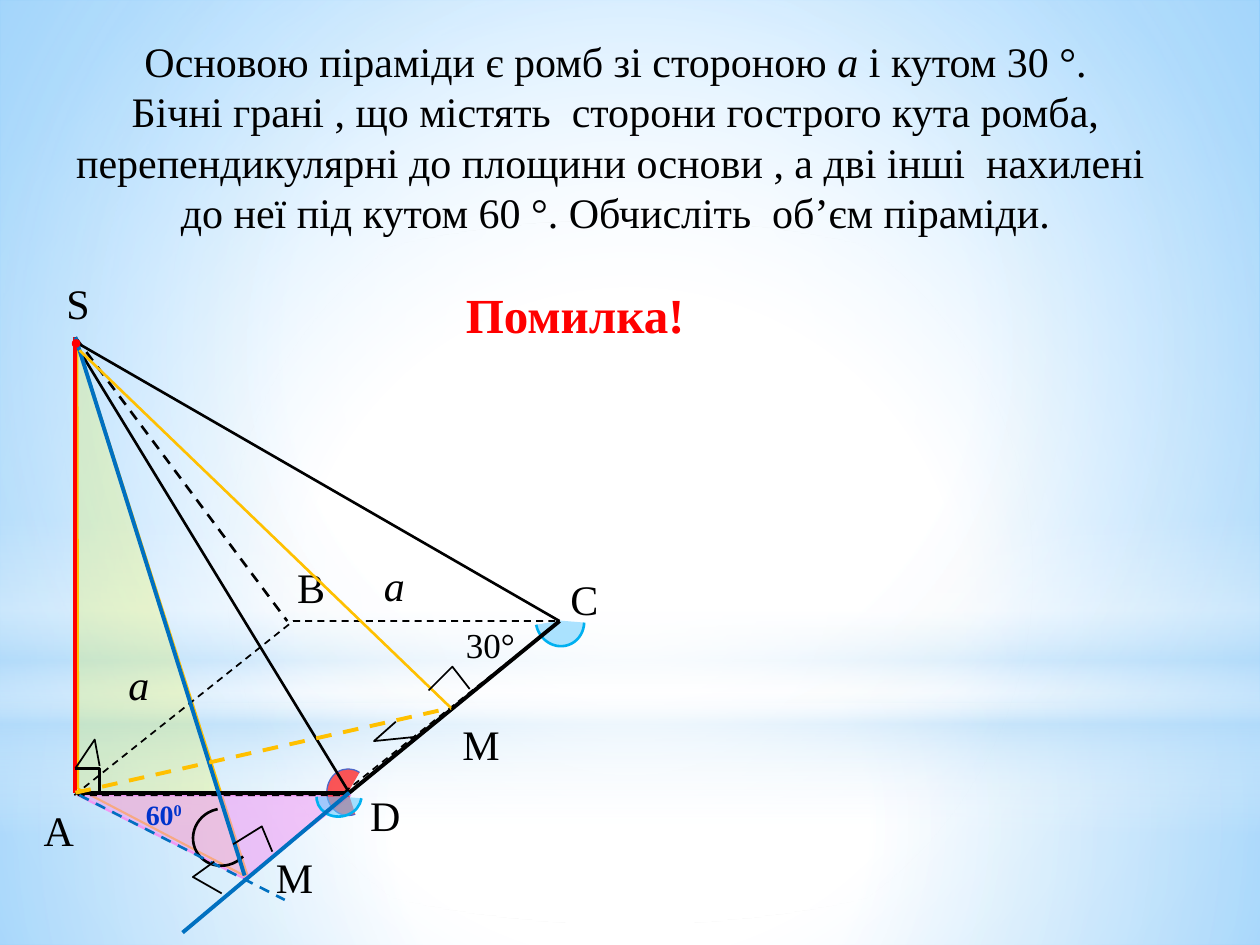
from lxml import etree
from pptx import Presentation
from pptx.dml.color import RGBColor
from pptx.enum.dml import MSO_LINE
from pptx.enum.shapes import MSO_CONNECTOR, MSO_SHAPE
from pptx.enum.text import MSO_ANCHOR, MSO_AUTO_SIZE, PP_ALIGN
from pptx.oxml.ns import qn
from pptx.util import Cm, Pt

RECTANGLE, OVAL = MSO_SHAPE.RECTANGLE, MSO_SHAPE.OVAL
TRIANGLE, ARC = MSO_SHAPE.ISOSCELES_TRIANGLE, MSO_SHAPE.ARC
PARALLELOGRAM = MSO_SHAPE.PARALLELOGRAM
STRAIGHT, DASH = MSO_CONNECTOR.STRAIGHT, MSO_LINE.DASH
CENTER, MIDDLE, NO_RESIZE = PP_ALIGN.CENTER, MSO_ANCHOR.MIDDLE, MSO_AUTO_SIZE.NONE

FONT = "Times New Roman"
COLORS = {
    "black": "000000", "white": "FFFFFF", "red": "FF0000", "blue": "0070C0",
    "orange": "FFC000", "yellow": "FFFF00", "pink": "F197F3", "indigo": "4E67C8",
    "cyan": "00B0F0", "light cyan": "66CCFF", "angle blue": "0033CC",
    "sky": "63BCFF", "pale sky": "B4DCFA",
}
ADJUST_PER_DEGREE = 0.6


def color(name):
    return RGBColor.from_string(COLORS[name])


def set_gradient(owner, stops, center=None):
    """Swap the solid fill under owner for a gradient: radial with a center, else vertical."""
    solid = next(owner.iter(qn("a:solidFill")))
    gradient = etree.Element(qn("a:gradFill"), rotWithShape="1")
    stop_list = etree.SubElement(gradient, qn("a:gsLst"))
    for position, name, opacity in stops:
        stop = etree.SubElement(stop_list, qn("a:gs"), pos=str(position * 1000))
        tint = etree.SubElement(stop, qn("a:srgbClr"), val=COLORS[name])
        if opacity < 100:
            etree.SubElement(tint, qn("a:alpha"), val=str(opacity * 1000))
    if center:
        circle = etree.SubElement(gradient, qn("a:path"), {"path": "circle"})
        sides = {side: str(value * 1000) for side, value in zip("ltrb", center)}
        etree.SubElement(circle, qn("a:fillToRect"), sides)
    else:
        etree.SubElement(gradient, qn("a:lin"), ang="5400000", scaled="0")
    solid.getparent().replace(solid, gradient)


def set_line(line, name, width, dash=None):
    line.color.rgb = color(name)
    line.width = Pt(width)
    if dash:
        line.dash_style = dash


def add_preset(slide, kind, box, fill=None, opacity=100, line=None, rotation=0, adjust=()):
    shape = slide.shapes.add_shape(kind, *map(Cm, box))
    shape.shadow.inherit = False
    shape.rotation = rotation
    for index, value in enumerate(adjust):
        shape.adjustments[index] = value
    if fill:
        shape.fill.solid()
        shape.fill.fore_color.rgb = color(fill)
        if opacity < 100:
            tint = next(shape.element.spPr.iter(qn("a:srgbClr")))
            etree.SubElement(tint, qn("a:alpha"), val=str(opacity * 1000))
    else:
        shape.fill.background()
    if line:
        set_line(shape.line, *line)
    else:
        shape.line.fill.background()
    return shape


def add_run(paragraph, text, size=24, name="black", **extra):
    run = paragraph.add_run()
    run.text = text
    values = {"name": FONT, "size": Pt(size), "bold": False, "italic": False, **extra}
    for attribute, value in values.items():
        setattr(run.font, attribute, value)
    run.font.color.rgb = color(name)
    return run


def add_label(slide, box, text, wrap=False, **style):
    frame = slide.shapes.add_textbox(*map(Cm, box)).text_frame
    frame.word_wrap = wrap
    add_run(frame.paragraphs[0], text, **style)
    return frame.paragraphs[0]


def add_backdrop(slide, width, height):
    slide.background.fill.solid()
    set_gradient(slide.element, [(0, "white", 100), (42, "white", 100), (100, "sky", 100)],
                 (24, 44, 24, 12))
    middle = (50, 50, 50, 50)
    horizon = 14.17
    layers = [
        (RECTANGLE, horizon, height - horizon,
         [(0, "white", 91), (37, "white", 76), (100, "pale sky", 79)], middle),
        (RECTANGLE, 0, horizon,
         [(0, "white", 89), (48, "white", 62), (100, "pale sky", 79)], middle),
        (RECTANGLE, 10.46, 6.35,
         [(0, "white", 0), (29, "white", 30), (45, "pale sky", 40),
          (55, "white", 26), (65, "pale sky", 60), (100, "white", 0)], None),
        (OVAL, 4.45, 14.17, [(0, "white", 100), (56, "white", 0)], middle),
    ]
    for kind, top, depth, stops, center in layers:
        layer = add_preset(slide, kind, (0, top, width, depth), fill="white")
        set_gradient(layer.element.spPr, stops, center)


def add_problem(slide, box):
    title = slide.shapes.title
    title.element.getparent().append(title.element)  # in front of the backdrop
    title.left, title.top, title.width, title.height = map(Cm, box)
    frame = title.text_frame
    for attribute, value in {"word_wrap": True, "auto_size": NO_RESIZE,
                             "vertical_anchor": MIDDLE}.items():
        setattr(frame, attribute, value)
    first, second = frame.paragraphs[0], frame.add_paragraph()
    first.alignment = second.alignment = CENTER
    add_run(first, "Основою піраміди є ромб зі стороною ")
    add_run(first, "а", italic=True)
    add_run(first, " і кутом 30 °.")
    add_run(second, "Бічні грані , що містять  сторони гострого кута ромба, "
                    "перепендикулярні до площини основи , а дві інші  нахилені  "
                    "до неї під кутом 60 °. Обчисліть  об’єм піраміди.")


def add_pyramid(slide, left, top):
    """Draw the pyramid with its apex S at (left, top)."""
    def place(x, y, *size):
        return (left + x, top + y, *size)

    def add_arc(box, start, end, rotation, **style):
        add_preset(slide, ARC, place(*box), rotation=rotation,
                   adjust=(start * ADJUST_PER_DEGREE, end * ADJUST_PER_DEGREE), **style)

    def add_edge(start, end, name="black", width=1.5, dash=None):
        edge = slide.shapes.add_connector(STRAIGHT, *map(Cm, place(*start) + place(*end)))
        etree.SubElement(edge.element.spPr, qn("a:effectLst"))
        set_line(edge.line, name, width, dash)

    def add_right_angle(points, width=1):
        start, *rest = [tuple(map(Cm, place(*point))) for point in points]
        builder = slide.shapes.build_freeform(*start)
        builder.add_line_segments(rest, close=False)
        mark = builder.convert_to_shape()
        mark.shadow.inherit = False
        mark.fill.background()
        set_line(mark.line, "black", width)

    apex, a, b, c, d = (0.02, 0), (0.02, 9.18), (4.29, 5.72), (9.78, 5.72), (5.54, 9.18)
    middle, foot = (7.59, 7.47), (3.43, 10.85)

    add_preset(slide, TRIANGLE, place(-5.18, 4.55, 11.33, 2.72), "yellow", 19,
               ("orange", 1.25), 252.3, [0.243])
    add_preset(slide, TRIANGLE, place(0.07, 9.23, 5.49, 1.68), "pink", 54,
               ("pink", 1.25), 180, [0.389])
    add_arc((5.05, 8.74, 0.94, 0.86), 162, 29.89, 270,
            fill="red", opacity=66, line=("indigo", 0.75))

    for text, x, y, width, italic in [
        ("S", -0.41, -1.34, 0.99, False), ("А", -0.87, 9.3, 1.14, False),
        ("В", 4.24, 4.4, 1.09, False), ("С", 9.75, 4.63, 1.09, False),
        ("D", 5.71, 9, 1.14, False), ("М", 3.81, 10.24, 1.27, False),
        ("М", 7.57, 7.55, 1.27, False), ("а", 5.99, 4.35, 0.94, True),
        ("а", 0.84, 6.36, 0.94, True),
    ]:
        add_label(slide, place(x, y, width, 1.27), text, italic=italic)
    add_label(slide, place(7.64, 5.65, 1.5, 1.12), "30°", size=20)
    slope = {"size": 16, "name": "angle blue", "bold": True}
    paragraph = add_label(slide, place(1.19, 9.15, 1.27, 0.94), "60", **slope)
    degree = add_run(paragraph, "0", **slope)
    degree.font._element.set("baseline", "30000")

    add_arc((2.41, 9.48, 1.14, 1.19), 162, 19.96, 240.7, line=("black", 1.5))
    add_arc((9.3, 5.19, 0.97, 1.04), 204.58, 10.13, 160,
            fill="light cyan", opacity=54, line=("cyan", 1.5))
    add_preset(slide, PARALLELOGRAM, place(0, 5.72, 9.78, 3.51),
               line=("black", 1, DASH), adjust=[1.257])

    add_edge((0.05, 0.18), d)
    add_edge(apex, a, "red", 2.25)
    add_edge(apex, b, dash=DASH)
    add_edge((0, 0.08), c)
    add_edge(a, d, width=2.25)
    add_edge(d, c, width=2.25)
    add_edge(apex, foot, "blue", 2.25)
    add_edge((0.1, 9.23), (4.24, 11.34), "blue", dash=DASH)
    add_preset(slide, OVAL, place(-0.03, 0.06, 0.13, 0.13), "red", line=("red", 1.25))
    add_edge((0.1, 0.26), middle, "orange")
    add_edge(a, middle, "orange", 2.25, DASH)
    add_arc((4.88, 8.85, 0.91, 0.81), 193.2, 7.84, 171.4,
            fill="light cyan", opacity=58, line=("cyan", 1.5))
    add_edge(d, (2.18, 12), "blue", 2.25)

    add_right_angle([(0.02, 8.69), (0.51, 8.69), (0.51, 9.23)], 1.5)
    for points in [
        [(0.02, 8.69), (0.41, 8.11), (0.51, 8.64)],
        [(3.2, 10.22), (3.78, 9.86), (3.99, 10.37)],
        [(2.97, 11.21), (2.39, 10.88), (2.82, 10.57)],
        [(6.83, 8.06), (6.04, 8.14), (6.48, 7.75)],
        [(7.14, 7.12), (7.62, 6.64), (7.97, 7.09)],
    ]:
        add_right_angle(points)


def main():
    presentation = Presentation()
    width, height = 25.4, 19.05
    presentation.slide_width, presentation.slide_height = Cm(width), Cm(height)
    slide = presentation.slides.add_slide(presentation.slide_layouts[5])
    add_backdrop(slide, width, height)
    add_problem(slide, (0.89, 0.56, 23.04, 4.37))
    add_pyramid(slide, 1.5, 6.8)
    add_label(slide, (9.14, 5.61, 5.08, 1.45), "Помилка!", wrap=True,
              size=28, name="red", bold=True)
    presentation.save("out.pptx")


if __name__ == "__main__":
    main()
